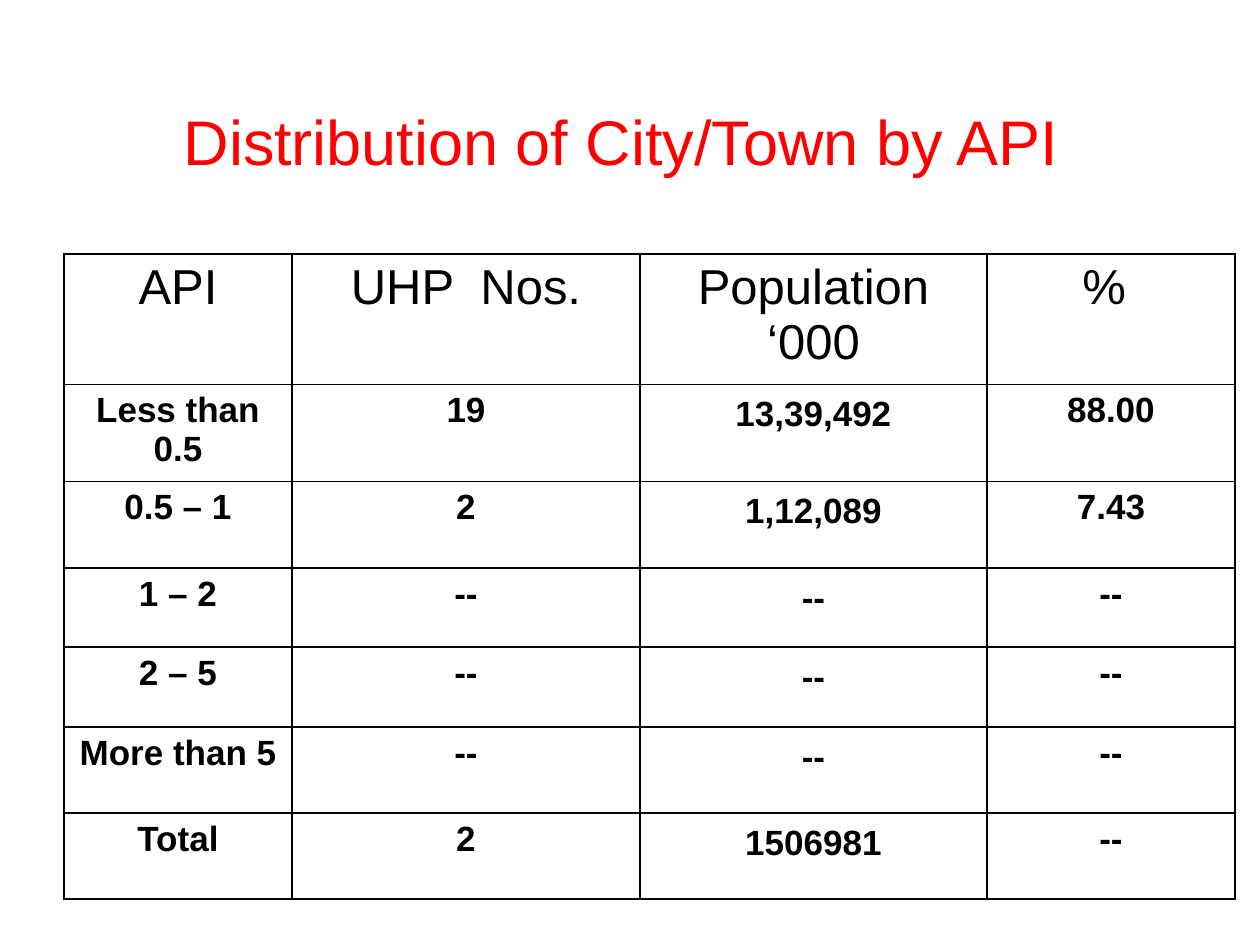
from lxml.etree import SubElement
from pptx import Presentation
from pptx.dml.color import RGBColor
from pptx.enum.text import MSO_ANCHOR, PP_ALIGN
from pptx.oxml.ns import qn
from pptx.util import Emu, Pt

EMU_PER_PX = 914400 / 126
COLORS = {"title": "FF0000", "text": "000000", "border": "000000"}

COLUMN_WIDTHS = [228, 348, 347, 248]
ROW_HEIGHTS = [130, 97, 87, 79, 80, 86, 86]
ROWS = [
    ["API", "UHP  Nos.", "Population ‘000", "% "],
    ["Less than 0.5", "19", "13,39,492", "88.00"],
    ["0.5 – 1", "2", "1,12,089", "7.43"],
    ["1 – 2", "--", "--", "--"],
    ["2 – 5", "--", "--", "--"],
    ["More than 5", "--", "--", "--"],
    ["Total", "2", "1506981", "--"],
]
POPULATION_COLUMN = 2


def px(length):
    return Emu(round(length * EMU_PER_PX))


class SlideBuilder:
    font_name = "Arial"
    border_width = Pt(1)

    def __init__(self, slide):
        self.slide = slide

    def set_text(self, paragraph, text, size, color, bold=False):
        paragraph.text = text
        paragraph.alignment = PP_ALIGN.CENTER
        font = paragraph.font
        font.name, font.size, font.bold = self.font_name, Pt(size), bold
        font.color.rgb = RGBColor.from_string(COLORS[color])

    def title(self, left, top, width, height, text):
        shape = self.slide.shapes.add_textbox(px(left), px(top), px(width), px(height))
        frame = shape.text_frame
        frame.word_wrap = True
        frame.vertical_anchor = MSO_ANCHOR.MIDDLE
        self.set_text(frame.paragraphs[0], text, 36, "title")

    def borders(self, cell):
        properties = cell._tc.get_or_add_tcPr()
        for side in ("a:lnL", "a:lnR", "a:lnT", "a:lnB"):
            line = SubElement(properties, qn(side), w=str(self.border_width))
            fill = SubElement(line, qn("a:solidFill"))
            SubElement(fill, qn("a:srgbClr"), val=COLORS["border"])

    def table(self, left, top, rows, column_widths, row_heights):
        table = self.slide.shapes.add_table(
            len(rows), len(column_widths), px(left), px(top),
            px(sum(column_widths)), px(sum(row_heights))).table
        table.first_row = table.horz_banding = False
        for column, width in zip(table.columns, column_widths):
            column.width = px(width)
        for row_index, (row, height) in enumerate(zip(table.rows, row_heights)):
            row.height = px(height)
            is_header = row_index == 0
            for column_index, cell in enumerate(row.cells):
                # Borders precede the fill in the cell properties
                self.borders(cell)
                cell.fill.background()
                paragraph = cell.text_frame.paragraphs[0]
                self.set_text(paragraph, rows[row_index][column_index],
                              28 if is_header else 20, "text", bold=not is_header)
                if column_index == POPULATION_COLUMN and not is_header:
                    paragraph.line_spacing = 1.1


def main():
    presentation = Presentation()
    presentation.slide_width, presentation.slide_height = px(1260), px(945)
    builder = SlideBuilder(presentation.slides.add_slide(presentation.slide_layouts[6]))

    # Title
    builder.title(84, 96, 1092, 88, "Distribution of City/Town by API ")

    # Distribution table
    builder.table(64, 254, ROWS, COLUMN_WIDTHS, ROW_HEIGHTS)

    presentation.save("out.pptx")


if __name__ == "__main__":
    main()
